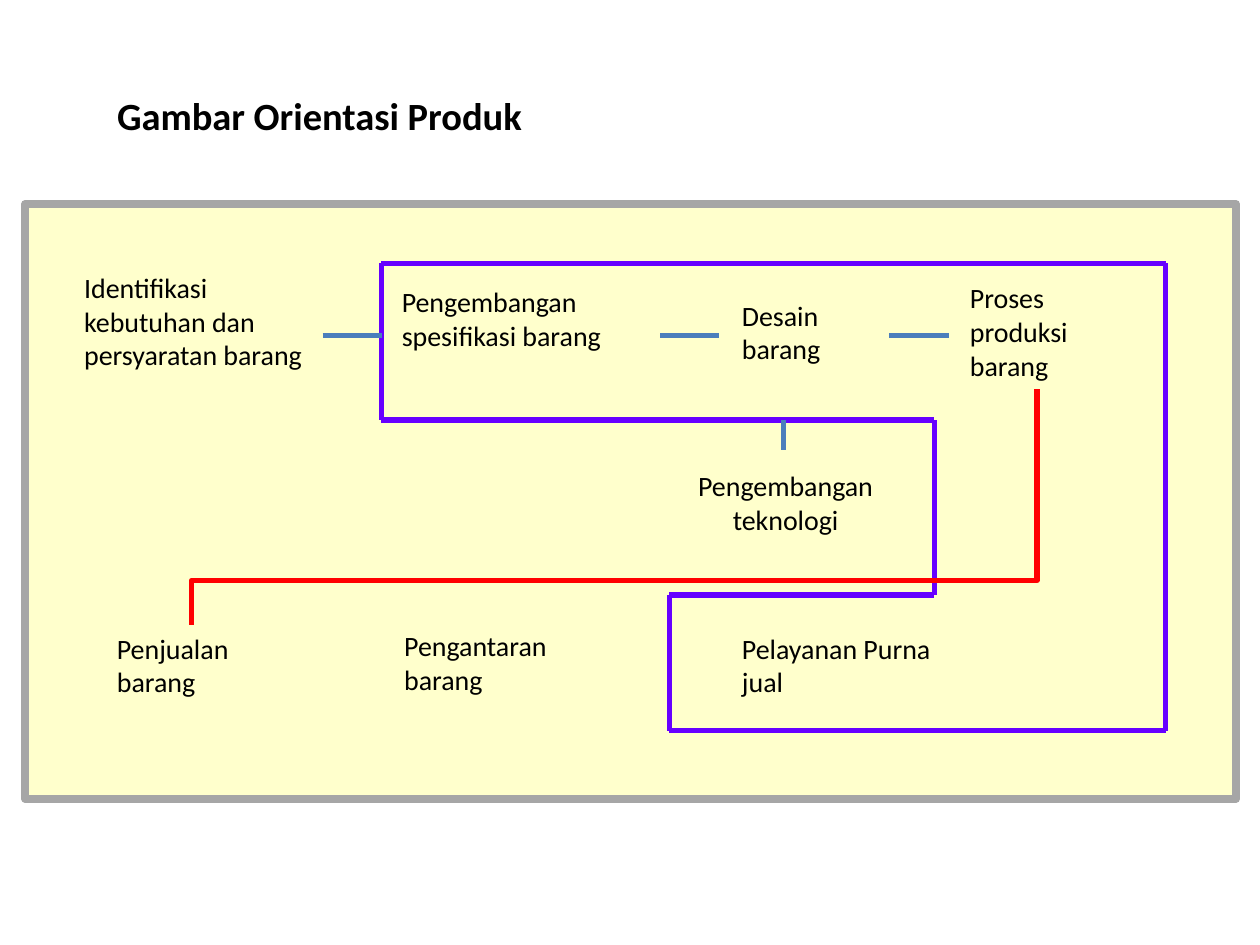
from itertools import pairwise

from lxml import etree
from pptx import Presentation
from pptx import util as u
from pptx.dml.color import RGBColor
from pptx.enum import shapes, text
from pptx.oxml.ns import qn

THEME = {
    "font": "Calibri", "title": 22, "body": 16, "line": 3, "frame": 4.5,
    "ink": "000000", "panel": "FFFFCC", "border": "A6A6A6",
    "loop": "6600FF", "link": "4B7EBC", "flow": "FF0000",
}
TITLE = ("Gambar Orientasi Produk", (59.76, 49, 248.4, 33.8))
PANEL = (14.4, 116.64, 691.92, 339.84)
LEFT, CENTER = text.PP_ALIGN.LEFT, text.PP_ALIGN.CENTER
STEPS = [
    (["Identifikasi kebutuhan dan persyaratan barang"], (41, 151.2, 147.6, 85), LEFT),
    (["Pengembangan spesifikasi barang"], (222.5, 159.1, 143.3, 65.5), LEFT),
    (["Desain", "barang"], (416.9, 167, 90.7, 46), LEFT),
    (["Proses produksi", "barang"], (547.2, 157, 90.7, 65.5), LEFT),
    (["Pengembangan teknologi"], (377.3, 264.2, 143.3, 46), CENTER),
    (["Penjualan", "barang"], (59.76, 357.1, 100, 46), LEFT),
    (["Pengantaran", "barang"], (223.9, 355.7, 124.6, 46), LEFT),
    (["Pelayanan Purna jual"], (416.9, 357.1, 143.3, 46), LEFT),
]
LOOP = [(218, 150.5), (666, 150.5), (666, 417.6), (382.5, 417.6),
        (382.5, 340), (534, 340), (534, 240), (218, 240)]
LINK_STARTS, LINK_Y, LINK_LENGTH = [184.4, 377.3, 508.3], 191.8, 33.8
TECH_LINK = ((447.8, 240), (447.8, 257))
FLOW_START, FLOW_END, FLOW_BEND = (592.6, 222.5), (109.4, 357.1), 81100


def rgb(name):
    return RGBColor.from_string(THEME[name])


def write(sp, lines, size, align=LEFT, bold=False, wrap=True):
    tf = sp.text_frame
    frame = {"word_wrap": wrap, "vertical_anchor": text.MSO_ANCHOR.TOP,
             "auto_size": text.MSO_AUTO_SIZE.SHAPE_TO_FIT_TEXT}
    for key, value in frame.items():
        setattr(tf, key, value)
    for i, line in enumerate(lines):
        p = tf.add_paragraph() if i else tf.paragraphs[0]
        p.alignment = align
        r = p.add_run()
        r.text = line
        style = {"name": THEME["font"], "size": u.Pt(THEME[size]), "bold": bold}
        for key, value in style.items():
            setattr(r.font, key, value)
        r.font.color.rgb = rgb("ink")


def connect(s, start, end, color, kind=shapes.MSO_CONNECTOR.STRAIGHT):
    sp = s.shapes.add_connector(kind, *map(u.Pt, start + end))
    sp.line.color.rgb = rgb(color)
    sp.line.width = u.Pt(THEME["line"])
    etree.SubElement(sp._element.spPr, qn("a:effectLst"))
    return sp


def add_flow(s):
    (x1, y1), (x2, y2) = FLOW_START, FLOW_END
    cx, cy = (x1 + x2) / 2, (y1 + y2) / 2
    half_w, half_h = abs(y2 - y1) / 2, abs(x2 - x1) / 2
    sp = connect(s, (cx - half_w, cy - half_h), (cx + half_w, cy + half_h),
                 "flow", shapes.MSO_CONNECTOR.ELBOW)
    spPr = sp._element.spPr
    spPr.find(qn("a:xfrm")).set("rot", str(90 * 60000))
    guides = spPr.find(qn("a:prstGeom")).find(qn("a:avLst"))
    etree.SubElement(guides, qn("a:gd"), name="adj1", fmla=f"val {FLOW_BEND}")


def main():
    prs = Presentation()
    prs.slide_width, prs.slide_height = u.Pt(720), u.Pt(540)
    s = prs.slides.add_slide(prs.slide_layouts[5])

    title, box = TITLE
    sp = s.shapes.title
    for key, value in zip(("left", "top", "width", "height"), box):
        setattr(sp, key, u.Pt(value))
    write(sp, [title], "title", bold=True, wrap=False)

    sp = s.shapes.add_shape(shapes.MSO_SHAPE.RECTANGLE, *map(u.Pt, PANEL))
    sp.shadow.inherit = False
    sp.fill.solid()
    sp.fill.fore_color.rgb = rgb("panel")
    sp.line.color.rgb = rgb("border")
    sp.line.width = u.Pt(THEME["frame"])

    for lines, box, align in STEPS:
        write(s.shapes.add_textbox(*map(u.Pt, box)), lines, "body", align)

    for start, end in pairwise(LOOP + LOOP[:1]):
        connect(s, start, end, "loop")
    for x in LINK_STARTS:
        connect(s, (x, LINK_Y), (x + LINK_LENGTH, LINK_Y), "link")
    add_flow(s)
    connect(s, *TECH_LINK, "link")

    prs.save("out.pptx")


if __name__ == "__main__":
    main()
